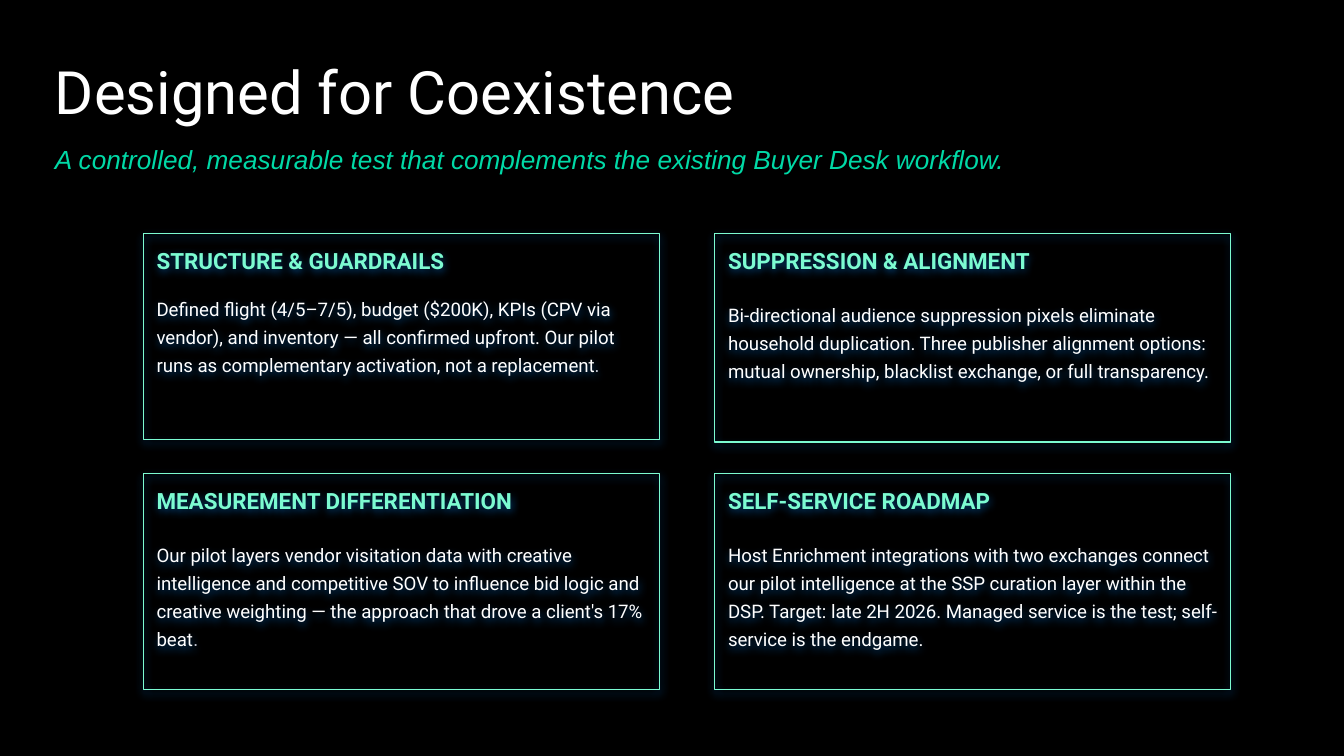
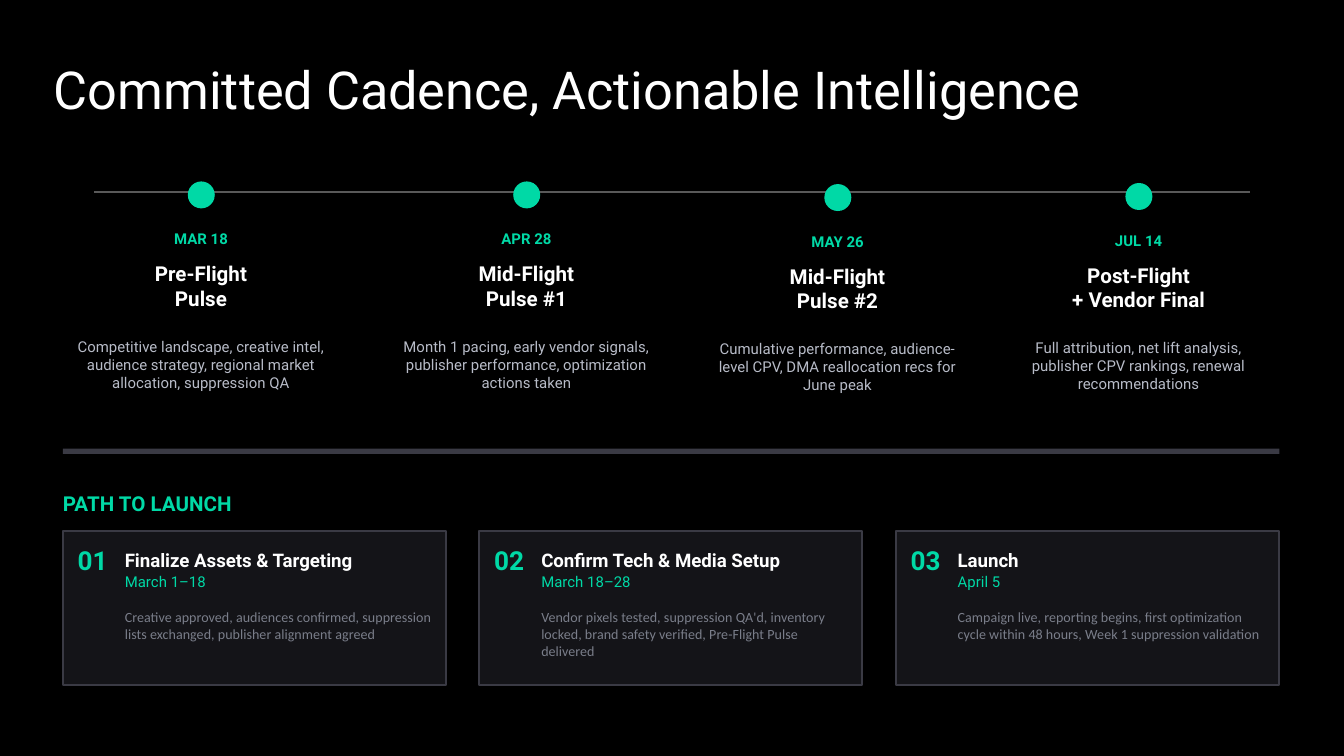
from dataclasses import dataclass

from lxml.etree import SubElement
from pptx import Presentation
from pptx.dml.color import RGBColor
from pptx.enum.shapes import MSO_CONNECTOR, MSO_SHAPE
from pptx.enum.text import MSO_ANCHOR, PP_ALIGN
from pptx.oxml.ns import qn
from pptx.util import Cm, Pt


@dataclass(frozen=True)
class Style:
    size: float
    color: str
    bold: bool = False
    italic: bool = False
    font: str = "Roboto"


@dataclass(frozen=True)
class Shadow:
    color: str
    opacity: int
    blur: float
    distance: float
    angle: int


class Theme:
    background = "000000"
    accent = "00D9A6"
    mint = "7CFBD1"
    white = "FFFFFF"
    silver = "B8BCC8"
    border = "3A3A44"
    panel = "141418"
    axis = "595959"

    title = Style(32, white)
    long_title = Style(28, white)
    subtitle = Style(14, accent, italic=True, font="Arial")
    card_heading = Style(12, mint, bold=True)
    card_body = Style(10, white)
    card_stop = Style(10, silver, font="Arial")
    date = Style(8, accent, bold=True)
    milestone = Style(11, white, bold=True)
    description = Style(8, silver)
    section = Style(11, accent, bold=True)
    step_number = Style(14, accent, bold=True)
    step_title = Style(10, white, bold=True)
    step_date = Style(8, accent)
    step_detail = Style(7.5, "7A7E8A", font="Calibri")

    glow = Shadow("0A81EE", 50, 4.5, 1.5, 90)
    drop = Shadow("000000", 25, 8, 2, 135)


class Deck:
    """Holds the theme and the slide being drawn; boxes are in centimetres."""

    def __init__(self, theme):
        self.theme = theme
        self.presentation = Presentation()
        self.presentation.slide_width = Cm(25.4)
        self.presentation.slide_height = Cm(14.29)
        self.slide = None

    def new_slide(self):
        self.slide = self.presentation.slides.add_slide(self.presentation.slide_layouts[6])
        fill = self.slide.background.fill
        fill.solid()
        fill.fore_color.rgb = RGBColor.from_string(self.theme.background)

    def add_run(self, paragraph, wording, style):
        run = paragraph.add_run()
        run.text = wording
        run.font.size = Pt(style.size)
        run.font.name = style.font
        run.font.bold = style.bold
        run.font.italic = style.italic
        run.font.color.rgb = RGBColor.from_string(style.color)

    def prepare_frame(self, frame, anchor, margin=0):
        frame.word_wrap = True
        frame.vertical_anchor = anchor
        frame.margin_left = frame.margin_right = Cm(margin)
        frame.margin_top = frame.margin_bottom = Cm(margin)

    def text(self, box, wording, style, align=PP_ALIGN.LEFT,
             anchor=MSO_ANCHOR.MIDDLE, line_spacing=None):
        """Write each line of the wording as a paragraph of its own."""
        frame = self.slide.shapes.add_textbox(*map(Cm, box)).text_frame
        self.prepare_frame(frame, anchor)
        for index, line in enumerate(wording.split("\n")):
            paragraph = frame.add_paragraph() if index else frame.paragraphs[0]
            paragraph.alignment = align
            paragraph.line_spacing = line_spacing
            self.add_run(paragraph, line, style)

    def shape(self, preset, box, fill=None, line=None, line_width=1, shadow=None):
        shape = self.slide.shapes.add_shape(preset, *map(Cm, box))
        if fill:
            shape.fill.solid()
            shape.fill.fore_color.rgb = RGBColor.from_string(fill)
        else:
            shape.fill.background()
        if line:
            shape.line.color.rgb = RGBColor.from_string(line)
            shape.line.width = Pt(line_width)
        else:
            shape.line.fill.background()
        shape.shadow.inherit = False
        if shadow:
            self.cast_shadow(shape, shadow)
        return shape

    def cast_shadow(self, shape, shadow):
        effects = shape._element.spPr.find(qn("a:effectLst"))
        outer = SubElement(effects, qn("a:outerShdw"), blurRad=str(Pt(shadow.blur)),
                           dist=str(Pt(shadow.distance)), dir=str(shadow.angle * 60000),
                           algn="bl", rotWithShape="0")
        color = SubElement(outer, qn("a:srgbClr"), val=shadow.color)
        SubElement(color, qn("a:alpha"), val=str(shadow.opacity * 1000))

    def rule(self, left, right, y):
        rule = self.slide.shapes.add_connector(
            MSO_CONNECTOR.STRAIGHT, Cm(left), Cm(y), Cm(right), Cm(y))
        rule.line.color.rgb = RGBColor.from_string(self.theme.axis)
        rule.line.width = Pt(0.75)
        SubElement(rule._element.spPr, qn("a:effectLst"))

    def glow_card(self, box, heading, body, gap, grey_stop):
        """Outlined card; gap is the space in points between heading and body."""
        theme = self.theme
        card = self.shape(MSO_SHAPE.RECTANGLE, box, line=theme.mint,
                          line_width=0.75, shadow=theme.glow)
        frame = card.text_frame
        self.prepare_frame(frame, MSO_ANCHOR.TOP, margin=0.25)
        top = frame.paragraphs[0]
        top.alignment = PP_ALIGN.LEFT
        self.add_run(top, heading, theme.card_heading)
        copy = frame.add_paragraph()
        copy.alignment = PP_ALIGN.LEFT
        copy.line_spacing = 1.25
        copy.space_before = Pt(gap)
        self.add_run(copy, body, theme.card_body)
        if grey_stop:
            self.add_run(copy, ".", theme.card_stop)

    def milestone(self, center, drop, width, date, name, description):
        """Dot on the timeline with its labels, lowered by drop."""
        theme = self.theme
        self.shape(MSO_SHAPE.OVAL, (center - 0.25, 3.43 + drop, 0.51, 0.51), fill=theme.accent)
        for top, label_width, height, wording, style in (
            (4.19, width, 0.64, date, theme.date),
            (4.83, width, 1.14, name, theme.milestone),
            (6.15, 4.7, 1.47, description, theme.description),
        ):
            self.text((center - label_width / 2, top + drop, label_width, height),
                      wording, style, PP_ALIGN.CENTER)

    def step(self, left, number, title, date, detail):
        theme = self.theme
        top = 10.03
        self.shape(MSO_SHAPE.RECTANGLE, (left, top, 7.24, 2.92), fill=theme.panel,
                   line=theme.border, shadow=theme.drop)
        text_left = left + 1.17
        self.text((left + 0.28, top + 0.23, 0.89, 0.64), f"{number:02}", theme.step_number)
        self.text((text_left, top + 0.23, 5.08, 0.64), title, theme.step_title)
        self.text((text_left, top + 0.74, 5.08, 0.46), date, theme.step_date)
        self.text((text_left, top + 1.47, 5.84, 1.22), detail, theme.step_detail,
                  anchor=MSO_ANCHOR.TOP)


# height, heading, body, gap, whether the closing full stop is grey
GUARDRAIL_CARDS = (
    (3.89, "STRUCTURE & GUARDRAILS",
     "Defined flight (4/5–7/5), budget ($200K), KPIs (CPV via vendor), and inventory — all "
     "confirmed upfront. Our pilot runs as complementary activation, not a replacement",
     9.7, True),
    (3.94, "SUPPRESSION & ALIGNMENT",
     "Bi-directional audience suppression pixels eliminate household duplication. Three "
     "publisher alignment options: mutual ownership, blacklist exchange, or full transparency.",
     13.2, False),
    (4.09, "MEASUREMENT DIFFERENTIATION",
     "Our pilot layers vendor visitation data with creative intelligence and competitive SOV to "
     "influence bid logic and creative weighting — the approach that drove a client's 17% beat",
     13.2, True),
    (4.09, "SELF-SERVICE ROADMAP",
     "Host Enrichment integrations with two exchanges connect our pilot intelligence at the "
     "SSP curation layer within the DSP. Target: late 2H 2026. Managed service is the test; "
     "self-service is the endgame.",
     13.2, False),
)

# center, drop, label width, date, name, description
MILESTONES = (
    (3.8, 0, 5.21, "MAR 18", "Pre-Flight\nPulse",
     "Competitive landscape, creative intel, audience strategy, regional market allocation, "
     "suppression QA"),
    (9.95, 0, 5.21, "APR 28", "Mid-Flight\nPulse #1",
     "Month 1 pacing, early vendor signals, publisher performance, optimization actions taken"),
    (15.83, 0.05, 4.7, "MAY 26", "Mid-Flight\nPulse #2",
     "Cumulative performance, audience-level CPV, DMA reallocation recs for June peak"),
    (21.52, 0.03, 4.7, "JUL 14", "Post-Flight\n+ Vendor Final",
     "Full attribution, net lift analysis, publisher CPV rankings, renewal recommendations"),
)

LAUNCH_STEPS = (
    ("Finalize Assets & Targeting", "March 1–18",
     "Creative approved, audiences confirmed, suppression lists exchanged, publisher alignment "
     "agreed"),
    ("Confirm Tech & Media Setup", "March 18–28",
     "Vendor pixels tested, suppression QA'd, inventory locked, brand safety verified, "
     "Pre-Flight Pulse delivered"),
    ("Launch", "April 5",
     "Campaign live, reporting begins, first optimization cycle within 48 hours, Week 1 "
     "suppression validation"),
)


def build_coexistence(deck):
    theme = deck.theme
    deck.new_slide()
    deck.text((1.04, 1.04, 19.3, 1.37), "Designed for Coexistence", theme.title,
              anchor=MSO_ANCHOR.TOP)
    deck.text((1.04, 2.62, 21.82, 1.3),
              "A controlled, measurable test that complements the existing Buyer Desk workflow.",
              theme.subtitle, anchor=MSO_ANCHOR.TOP, line_spacing=1.15)
    for index, (height, *content) in enumerate(GUARDRAIL_CARDS):
        row, column = divmod(index, 2)
        deck.glow_card((2.71 + column * 10.8, 4.42 + row * 4.53, 9.75, height), *content)


def build_cadence(deck):
    theme = deck.theme
    left = 1.19
    deck.new_slide()
    deck.text((1.02, 0.91, 21.84, 1.52), "Committed Cadence, Actionable Intelligence",
              theme.long_title)
    deck.rule(1.78, 23.62, 3.63)
    for milestone in MILESTONES:
        deck.milestone(*milestone)
    deck.shape(MSO_SHAPE.RECTANGLE, (left, 8.48, 22.99, 0.1), fill=theme.border)
    deck.text((left, 9.14, 7.62, 0.76), "PATH TO LAUNCH", theme.section)
    for index, step in enumerate(LAUNCH_STEPS):
        deck.step(left + index * 7.87, index + 1, *step)


def main():
    deck = Deck(Theme())
    build_coexistence(deck)
    build_cadence(deck)
    deck.presentation.save("out.pptx")


if __name__ == "__main__":
    main()
